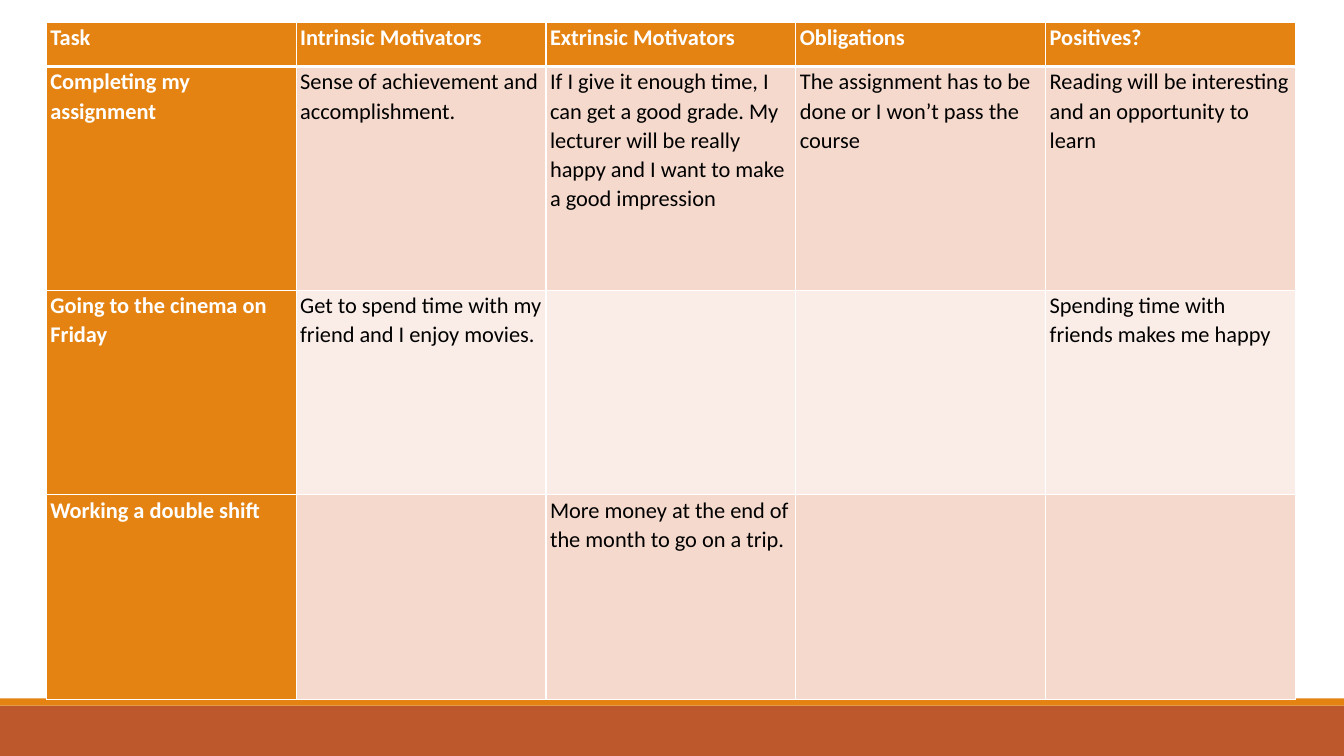
from lxml import etree
from pptx import Presentation
from pptx.dml.color import RGBColor
from pptx.enum.shapes import MSO_SHAPE
from pptx.oxml.ns import qn
from pptx.util import Inches, Pt

RECTANGLE = MSO_SHAPE.RECTANGLE
BLANK_LAYOUT = 6
ORANGE, RUST, WHITE, BLACK = "E48312", "BD582C", "FFFFFF", "000000"
BANDS = ("F5D9CC", "FAEDE7")
COLUMN_WIDTH = 12.39 / 5
ROW_HEIGHTS = (0.44, 2.22, 2.03, 2.03)
CELL_FORMAT = {
    "margin_left": Inches(0.04),
    "margin_right": Inches(0.04),
    "margin_top": 0,
    "margin_bottom": 0,
}
MOTIVATION = (
    ("Task", "Intrinsic Motivators", "Extrinsic Motivators", "Obligations", "Positives?"),
    (
        "Completing my assignment",
        "Sense of achievement and accomplishment.",
        "If I give it enough time, I can get a good grade. My lecturer will be "
        "really happy and I want to make a good impression",
        "The assignment has to be done or I won’t pass the course",
        "Reading will be interesting and an opportunity to learn",
    ),
    (
        "Going to the cinema on Friday",
        "Get to spend time with my friend and I enjoy movies.",
        "",
        "",
        "Spending time with friends makes me happy",
    ),
    (
        "Working a double shift",
        "",
        "More money at the end of the month to go on a trip.",
        "",
        "",
    ),
)


def rgb(color):
    return RGBColor.from_string(color)


def add_band(slide, top, height, color):
    band = slide.shapes.add_shape(
        RECTANGLE, 0, Inches(top), Inches(13.33), Inches(height)
    )
    band.shadow.inherit = False
    band.fill.solid()
    band.fill.fore_color.rgb = rgb(color)
    band.line.fill.background()


def set_borders(cell, widths):
    """Draw white left, right, top and bottom borders of the given point widths."""
    properties = cell._tc.get_or_add_tcPr()
    for position, (side, width) in enumerate(zip("LRTB", widths)):
        border = etree.Element(qn(f"a:ln{side}"), w=str(Pt(width)))
        fill = etree.SubElement(border, qn("a:solidFill"))
        etree.SubElement(fill, qn("a:srgbClr"), val=WHITE)
        properties.insert(position, border)


def write_cell(cell, text, is_heading):
    paragraph = cell.text_frame.paragraphs[0]
    paragraph.line_spacing = 1.07
    font_format = {"name": "Calibri", "size": Pt(16), "bold": is_heading}
    run = paragraph.add_run()
    run.text = text
    for attribute, value in font_format.items():
        setattr(run.font, attribute, value)
    run.font.color.rgb = rgb(WHITE if is_heading else BLACK)


def add_motivation_table(slide):
    table = slide.shapes.add_table(
        len(MOTIVATION), len(MOTIVATION[0]), Inches(0.46), Inches(0.22),
        Inches(12.39), Inches(sum(ROW_HEIGHTS)),
    ).table
    for column in table.columns:
        column.width = Inches(COLUMN_WIDTH)
    for row, height in zip(table.rows, ROW_HEIGHTS):
        row.height = Inches(height)

    for row_number, texts in enumerate(MOTIVATION):
        for column_number, text in enumerate(texts):
            cell = table.cell(row_number, column_number)
            is_heading = row_number == 0 or column_number == 0
            for attribute, value in CELL_FORMAT.items():
                setattr(cell, attribute, value)
            cell.fill.solid()
            band_color = BANDS[(row_number - 1) % 2]
            cell.fill.fore_color.rgb = rgb(ORANGE if is_heading else band_color)
            top_width = 3 if row_number == 1 else 1
            bottom_width = 3 if row_number == 0 else 1
            set_borders(cell, (1, 1, top_width, bottom_width))
            if text:
                write_cell(cell, text, is_heading)


def main():
    presentation = Presentation()
    presentation.slide_width = Inches(13.33)
    presentation.slide_height = Inches(7.5)
    slide = presentation.slides.add_slide(presentation.slide_layouts[BLANK_LAYOUT])
    add_band(slide, 7, 0.5, RUST)
    add_band(slide, 6.93, 0.07, ORANGE)
    add_motivation_table(slide)
    presentation.save("out.pptx")


if __name__ == "__main__":
    main()
